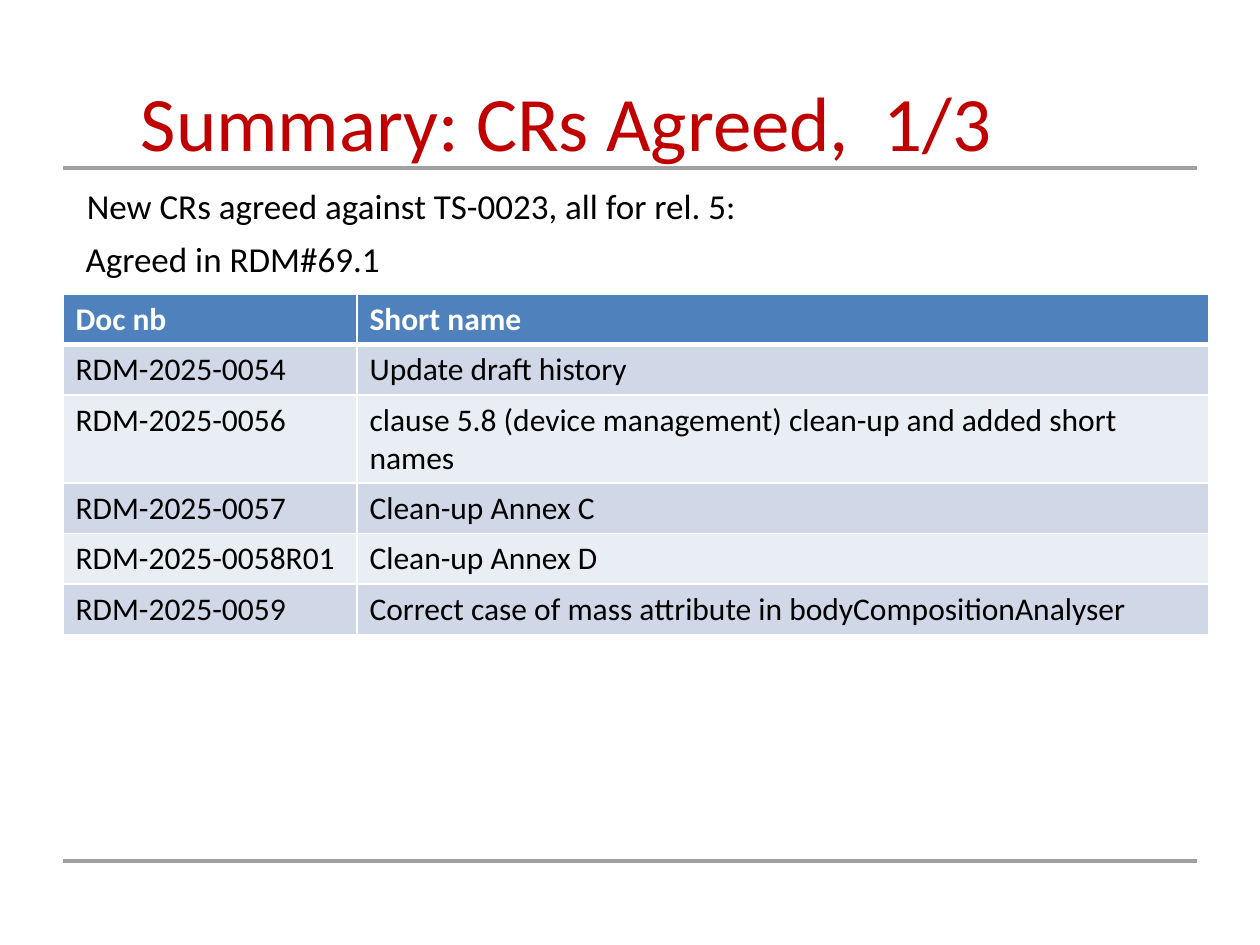
import pptx
import pptx.dml.color
import pptx.enum.shapes
import pptx.enum.text
import pptx.oxml
import pptx.oxml.ns
import pptx.util

Pt = pptx.util.Pt
ALIGN = pptx.enum.text.PP_ALIGN
ANCHOR = pptx.enum.text.MSO_ANCHOR

COLORS = {
    "title": "C00000",
    "text": "000000",
    "rule": "A0A0A3",
    "white": "FFFFFF",
    "header": "4F81BD",
    "odd": "D0D8E8",
    "even": "E9EDF4",
}

AGREED_CRS = [
    ("Doc nb", "Short name"),
    ("RDM-2025-0054", "Update draft history"),
    ("RDM-2025-0056", "clause 5.8 (device management) clean-up and added short names"),
    ("RDM-2025-0057", "Clean-up Annex C"),
    ("RDM-2025-0058R01", "Clean-up Annex D"),
    ("RDM-2025-0059", "Correct case of mass attribute in bodyCompositionAnalyser"),
]


class SlideBuilder:
    font_name = "Calibri"

    def __init__(self, slide):
        self.slide = slide

    def color(self, name):
        return pptx.dml.color.RGBColor.from_string(COLORS[name])

    def apply(self, target, values):
        for name, value in values.items():
            setattr(target, name, value)

    def add_words(self, paragraph, text, size, color, bold=False):
        run = paragraph.add_run()
        run.text = text
        self.apply(run.font, {"name": self.font_name, "size": Pt(size), "bold": bold})
        run.font.color.rgb = self.color(color)

    def rule(self, left, right, top):
        line = self.slide.shapes.add_connector(
            pptx.enum.shapes.MSO_CONNECTOR.STRAIGHT, Pt(left), Pt(top), Pt(right), Pt(top)
        )
        line.line.width = Pt(1.75)
        line.line.color.rgb = self.color("rule")
        properties = line._element.spPr
        properties.append(pptx.oxml.parse_xml(f"<a:effectLst {pptx.oxml.ns.nsdecls('a')}/>"))

    def text(self, box, text, size, color, align=ALIGN.LEFT, anchor=ANCHOR.TOP, indent=0):
        shape = self.slide.shapes.add_textbox(*map(Pt, box))
        self.apply(shape.text_frame, {"word_wrap": True, "vertical_anchor": anchor})
        paragraph = shape.text_frame.paragraphs[0]
        paragraph.alignment = align
        if indent:
            paragraph._p.get_or_add_pPr().set("marL", str(Pt(indent)))
        self.add_words(paragraph, text, size, color)

    def border(self, cell, side, width):
        cell._tc.get_or_add_tcPr().append(pptx.oxml.parse_xml(
            f'<a:ln{side} {pptx.oxml.ns.nsdecls("a")} w="{Pt(width)}"><a:solidFill>'
            f'<a:srgbClr val="{COLORS["white"]}"/></a:solidFill></a:ln{side}>'
        ))

    def table(self, left, top, widths, row_height, rows):
        shape = self.slide.shapes.add_table(
            len(rows), len(widths), Pt(left), Pt(top), Pt(sum(widths)), Pt(row_height * len(rows))
        )
        table = shape.table
        table.horz_banding = False
        for column, width in zip(table.columns, widths):
            column.width = Pt(width)
        for row_index, values in enumerate(rows):
            table.rows[row_index].height = Pt(row_height)
            is_header = row_index == 0
            band = "header" if is_header else "odd" if row_index % 2 else "even"
            borders = {"L": 1, "R": 1, "T": 3 if row_index == 1 else 1, "B": 3 if is_header else 1}
            for column_index, value in enumerate(values):
                cell = table.cell(row_index, column_index)
                for side, width in borders.items():
                    self.border(cell, side, width)
                cell.fill.solid()
                cell.fill.fore_color.rgb = self.color(band)
                text_color = "white" if is_header else "text"
                self.add_words(cell.text_frame.paragraphs[0], value, 18, text_color, is_header)


def main():
    presentation = pptx.Presentation()
    formats = {"slide_width": Pt(720), "slide_height": Pt(540)}
    for name, value in formats.items():
        setattr(presentation, name, value)
    builder = SlideBuilder(presentation.slides.add_slide(presentation.slide_layouts[6]))
    for top in (492, 96):
        builder.rule(36, 684, top)
    builder.text((0, 36, 648, 66), "Summary: CRs Agreed,  1/3", 44, "title",
                 align=ALIGN.CENTER, anchor=ANCHOR.MIDDLE)
    builder.text((36, 102, 630, 36), "New CRs agreed against TS-0023, all for rel. 5:",
                 20, "text", indent=6.5)
    builder.table(36, 168, (168, 486.5), 25.2, AGREED_CRS)
    builder.text((35.3, 132, 624, 29.5), "Agreed in RDM#69.1", 20, "text", indent=6.5)
    presentation.save("out.pptx")


if __name__ == "__main__":
    main()
